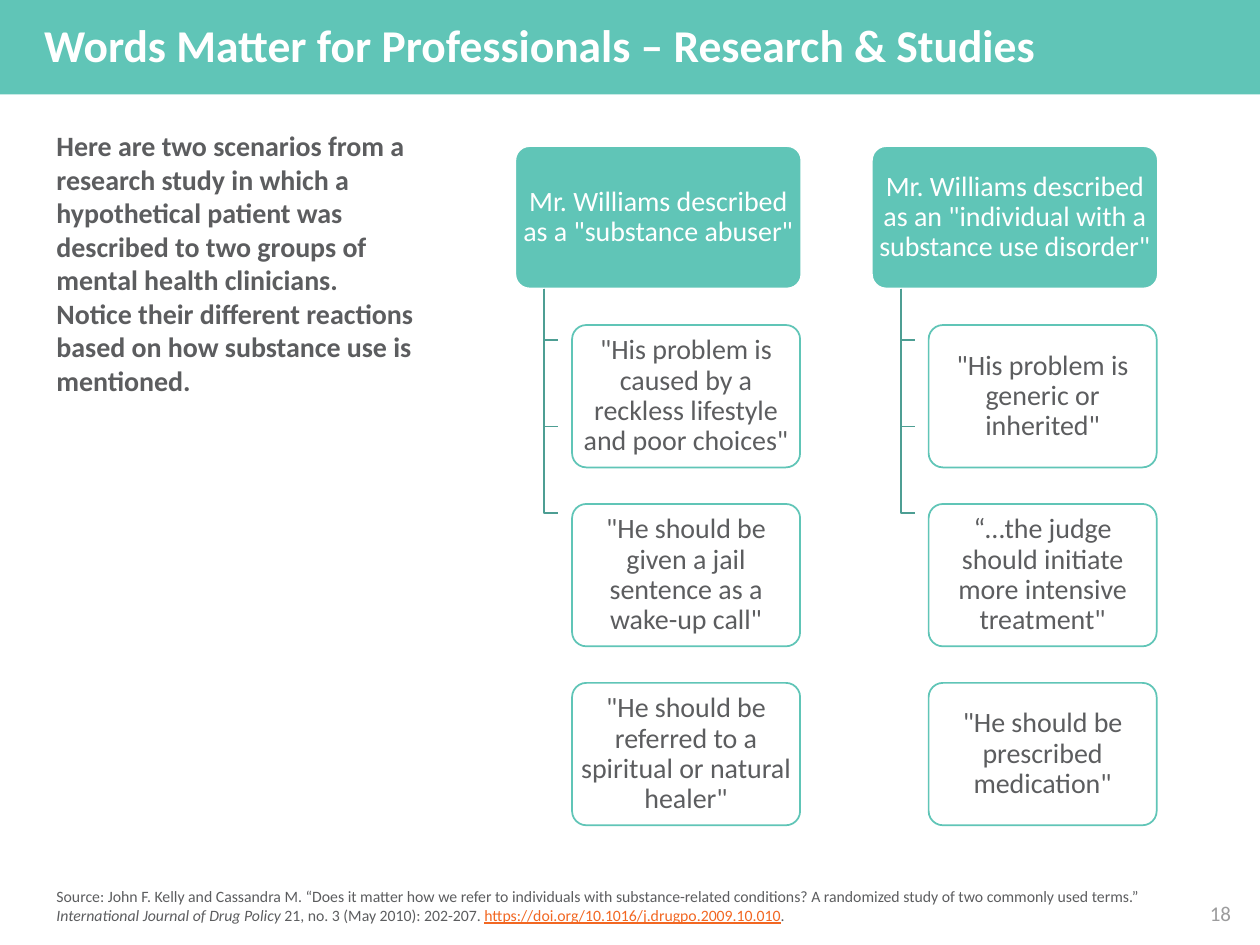
import pptx
import pptx.util
import pptx.dml.color
import pptx.enum.shapes
import pptx.enum.text
import pptx.oxml.ns
import lxml.etree

Inches, Pt = pptx.util.Inches, pptx.util.Pt
Kind = pptx.enum.shapes.MSO_SHAPE
Align = pptx.enum.text.PP_ALIGN
Anchor = pptx.enum.text.MSO_ANCHOR
hues = {"teal": "60C5B7", "dark": "4D9E93", "text": "5C5D5F",
        "white": "FFFFFF", "gray": "9C9C9D", "link": "F26722"}
rgb = {name: pptx.dml.color.RGBColor.from_string(code) for name, code in hues.items()}


def style(shape, size, hue, bold=False, align=Align.LEFT, anchor=Anchor.MIDDLE,
          pad=(0.1, 0.05)):
    """Format the text of a shape; pad is the side and the top inset."""
    frame = shape.text_frame
    frame.word_wrap = True
    frame.vertical_anchor = anchor
    frame.margin_left = frame.margin_right = Inches(pad[0])
    frame.margin_top = frame.margin_bottom = Inches(pad[1])
    for para in frame.paragraphs:
        para.alignment = align
        for run in para.runs:
            run.font.name = "Calibri"
            run.font.size = Pt(size)
            run.font.bold = bold
            run.font.color.rgb = rgb[hue]


def add_box(kind, spot, fill, line, text):
    box = shapes.add_shape(kind, *map(Inches, spot))
    box.shadow.inherit = False
    box.fill.solid()
    box.fill.fore_color.rgb = rgb[fill]
    if line:
        box.line.color.rgb = rgb[line]
        box.line.width = Pt(1)
    else:
        box.line.fill.background()
    box.text_frame.text = text
    return box


deck = pptx.Presentation()
deck.slide_width, deck.slide_height = Inches(10), Inches(7.5)
slide = deck.slides.add_slide(deck.slide_layouts[6])
shapes = slide.shapes

# Title band
title = add_box(Kind.RECTANGLE, (0, 0, 10, 0.75), "teal", None,
                "Words Matter for Professionals – Research & Studies")
style(title, 26, "white", bold=True, pad=(0.35, 0.05))
title.text_frame.paragraphs[0].line_spacing = 0.9

# Introduction
intro = shapes.add_textbox(Inches(0.35), Inches(0.96), Inches(3.1), Inches(2.52))
intro.text_frame.text = (
    "Here are two scenarios from a research study in which a hypothetical patient "
    "was described to two groups of mental health clinicians.  Notice their "
    "different reactions based on how substance use is mentioned.")
style(intro, 16, "text", bold=True, anchor=Anchor.TOP, pad=(0.1, 0.06))

# Two trees: a head and three replies each
trees = [
    ('Mr. Williams described as a "substance abuser"',
     ['"His problem is caused by a reckless lifestyle and poor choices"',
      '"He should be given a jail sentence as a wake-up call"',
      '"He should be referred to a spiritual or natural healer"']),
    ('Mr. Williams described as an "individual with a substance use disorder"',
     ['"His problem is generic or inherited"',
      '“…the judge should initiate more intensive treatment"',
      '"He should be prescribed medication"']),
]
top, high, step = 1.16, 1.13, 1.42
for col, (head, replies) in enumerate(trees):
    left = 4.09 + 2.83 * col
    boxes = [(add_box(Kind.ROUNDED_RECTANGLE, (left, top, 2.27, high),
                      "teal", "white", head), "white")]
    for row, reply in enumerate(replies):
        stem, base, end = left + 0.23, top + high, 2.7 + 0.685 * row
        path = shapes.build_freeform(Inches(stem), Inches(base))
        path.add_line_segments([(Inches(stem), Inches(end)),
                                (Inches(stem + 0.11), Inches(end))], close=False)
        elbow = path.convert_to_shape()
        elbow.shadow.inherit = False
        elbow.fill.background()
        elbow.line.color.rgb = rgb["dark"]
        elbow.line.width = Pt(1)

        spot = (left + 0.45, top + step * (row + 1), 1.81, high)
        box = add_box(Kind.ROUNDED_RECTANGLE, spot, "white", "teal", reply)
        tint = box.fill._xPr.find(".//" + pptx.oxml.ns.qn("a:srgbClr"))
        lxml.etree.SubElement(tint, pptx.oxml.ns.qn("a:alpha"), val="90000")
        boxes.append((box, "text"))
    for box, hue in boxes:
        box.adjustments[0] = 0.1
        style(box, 16, hue, align=Align.CENTER, pad=(0.02, 0.02))
        box.text_frame.paragraphs[0].line_spacing = 0.9

# Source line
note = shapes.add_textbox(Inches(0.35), Inches(6.99), Inches(9.3), Inches(0.4))
para = note.text_frame.paragraphs[0]
parts = [
    "Source: John F. Kelly and Cassandra M. “Does it matter how we refer to "
    "individuals with substance-related conditions? A randomized study of two "
    "commonly used terms.” ",
    "International Journal of Drug Policy ",
    "21, no. 3 (May 2010): 202-207. ",
    "https://doi.org/10.1016/j.drugpo.2009.10.010",
    ".",
]
for part in parts:
    para.add_run().text = part
style(note, 9, "text")
para.runs[1].font.italic = True
para.runs[3].font.underline = True
para.runs[3].font.color.rgb = rgb["link"]

# Page number
page = shapes.add_textbox(Inches(7.59), Inches(7.1), Inches(2.25), Inches(0.3))
page.text_frame.text = "18"
style(page, 12, "gray", align=Align.RIGHT, pad=(0.07, 0.04))

deck.save("out.pptx")
